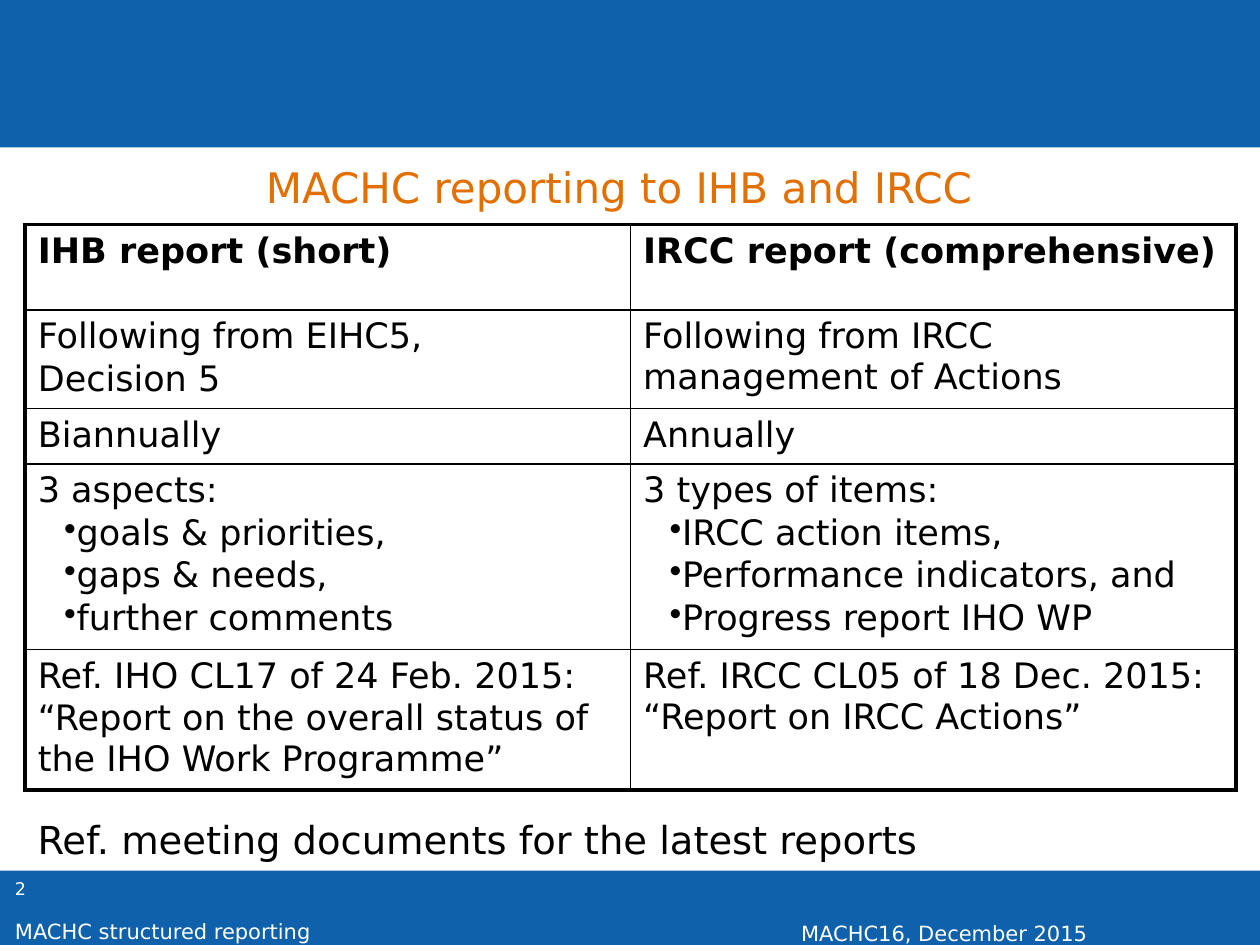
from lxml.etree import SubElement
from pptx import Presentation
from pptx.dml.color import RGBColor
from pptx.enum.shapes import MSO_SHAPE as SHAPE
from pptx.enum.text import MSO_ANCHOR as ANCHOR, MSO_AUTO_SIZE as FIT, PP_ALIGN as ALIGN
from pptx.oxml import parse_xml
from pptx.oxml.ns import nsdecls, qn
from pptx.util import Inches, Pt

BLUE = RGBColor(0x0E, 0x61, 0xAA)
ORANGE = RGBColor(0xE1, 0x70, 0x00)
WHITE = RGBColor(0xFF, 0xFF, 0xFF)
BLACK = RGBColor(0x00, 0x00, 0x00)
BULLET = "•"

REPORTS = [
    [["IHB report (short)"], ["IRCC report (comprehensive)"]],
    [["Following from EIHC5,", "Decision 5"],
     ["Following from IRCC management of Actions"]],
    [["Biannually"], ["Annually"]],
    [["3 aspects:", "•goals & priorities,", "•gaps & needs,", "•further comments"],
     ["3 types of items:", "•IRCC action items,", "•Performance indicators, and",
      "•Progress report IHO WP"]],
    [["Ref. IHO CL17 of 24 Feb. 2015:",
      "“Report on the overall status of the IHO Work Programme”"],
     ["Ref. IRCC CL05 of 18 Dec. 2015: “Report on IRCC Actions”"]],
]
ROW_HEIGHTS = [6.8, 6.8, 4.4, 8.9, 8.9]


class Deck:
    """Slide style on a grid of 100 columns by 75 rows."""

    font = "DejaVu Sans"
    outer, inner = Pt(2.25), Pt(1)

    def __init__(self):
        self.prs = Presentation()
        self.prs.slide_width, self.prs.slide_height = Inches(10), Inches(7.5)
        self.slide = self.prs.slides.add_slide(self.prs.slide_layouts[5])

    def col(self, n):
        return round(self.prs.slide_width * n / 100)

    def row(self, n):
        return round(self.prs.slide_height * n / 75)

    def area(self, x, y, w, h):
        return self.col(x), self.row(y), self.col(w), self.row(h)

    def run(self, p, text, size, color, bold=False):
        r = p.add_run()
        r.text = text
        r.font.name, r.font.size, r.font.bold = self.font, Pt(size), bold
        r.font.color.rgb = color

    def band(self, y, h):
        s = self.slide.shapes.add_shape(SHAPE.RECTANGLE, *self.area(0, y, 100, h))
        s.shadow.inherit = False
        s.fill.solid()
        s.fill.fore_color.rgb = BLUE
        s.line.fill.background()

    def fill_text(self, s, text, size, color, wrap):
        tf = s.text_frame
        tf.word_wrap = wrap
        tf.auto_size = FIT.NONE if wrap else FIT.SHAPE_TO_FIT_TEXT
        tf.vertical_anchor = ANCHOR.TOP
        p = tf.paragraphs[0]
        p.alignment = ALIGN.LEFT
        self.run(p, text, size, color)

    def title(self, text, size, color, *area):
        s = self.slide.shapes.title
        s.left, s.top, s.width, s.height = self.area(*area)
        self.fill_text(s, text, size, color, wrap=False)

    def text(self, text, size, color, *area, wrap=True):
        s = self.slide.shapes.add_textbox(*self.area(*area))
        self.fill_text(s, text, size, color, wrap)

    def fill_cell(self, cell, lines, bold):
        for i, line in enumerate(lines):
            tf = cell.text_frame
            p = tf.add_paragraph() if i else tf.paragraphs[0]
            if line.startswith(BULLET):
                p.level = 1
                pPr = p._p.get_or_add_pPr()
                pPr.set("marL", str(Inches(0.21)))
                pPr.set("indent", "0")
                SubElement(pPr, qn("a:buChar")).set("char", BULLET)
            if i:
                p.space_before = Pt(1)
            self.run(p, line.lstrip(BULLET), 20, BLACK, bold)

    def borders(self, cell, edges):
        cell.fill.background()
        tcPr = cell._tc.get_or_add_tcPr()
        for i, (side, is_outer) in enumerate(zip("LRTB", edges)):
            width = self.outer if is_outer else self.inner
            tcPr.insert(i, parse_xml(
                f'<a:ln{side} {nsdecls("a")} w="{width}"><a:solidFill>'
                f'<a:srgbClr val="{BLACK}"/></a:solidFill></a:ln{side}>'))

    def table(self, rows, heights, *area):
        last_row, last_col = len(rows) - 1, len(rows[0]) - 1
        frame = self.slide.shapes.add_table(len(rows), len(rows[0]), *self.area(*area))
        table = frame.table
        table.first_row = table.horz_banding = False
        for i, (cells, height) in enumerate(zip(rows, heights)):
            table.rows[i].height = self.row(height)
            for j, lines in enumerate(cells):
                cell = table.cell(i, j)
                self.fill_cell(cell, lines, bold=i == 0)
                self.borders(cell, (j == 0, j == last_col, i == 0, i == last_row))
        frame.height = self.row(area[3])


def main():
    deck = Deck()
    deck.band(69.1, 5.9)
    deck.band(0, 11.7)
    deck.text("2", 10, WHITE, 0.2, 69.2, 7.8, 4)
    deck.text("MACHC16, December 2015", 12, WHITE, 62.6, 72.6, 37.4, 2.4)
    deck.text("MACHC structured reporting", 12, WHITE, 0.2, 72.4, 43.8, 2.4)
    deck.title("MACHC reporting to IHB and IRCC", 24, ORANGE, 20.1, 12.3, 59.7, 5)
    deck.table(REPORTS, ROW_HEIGHTS, 2, 17.8, 96.1, 45.9)
    deck.text("Ref. meeting documents for the latest reports", 22, BLACK,
              2, 64.3, 72.6, 4.7, wrap=False)
    deck.prs.save("out.pptx")


if __name__ == "__main__":
    main()
